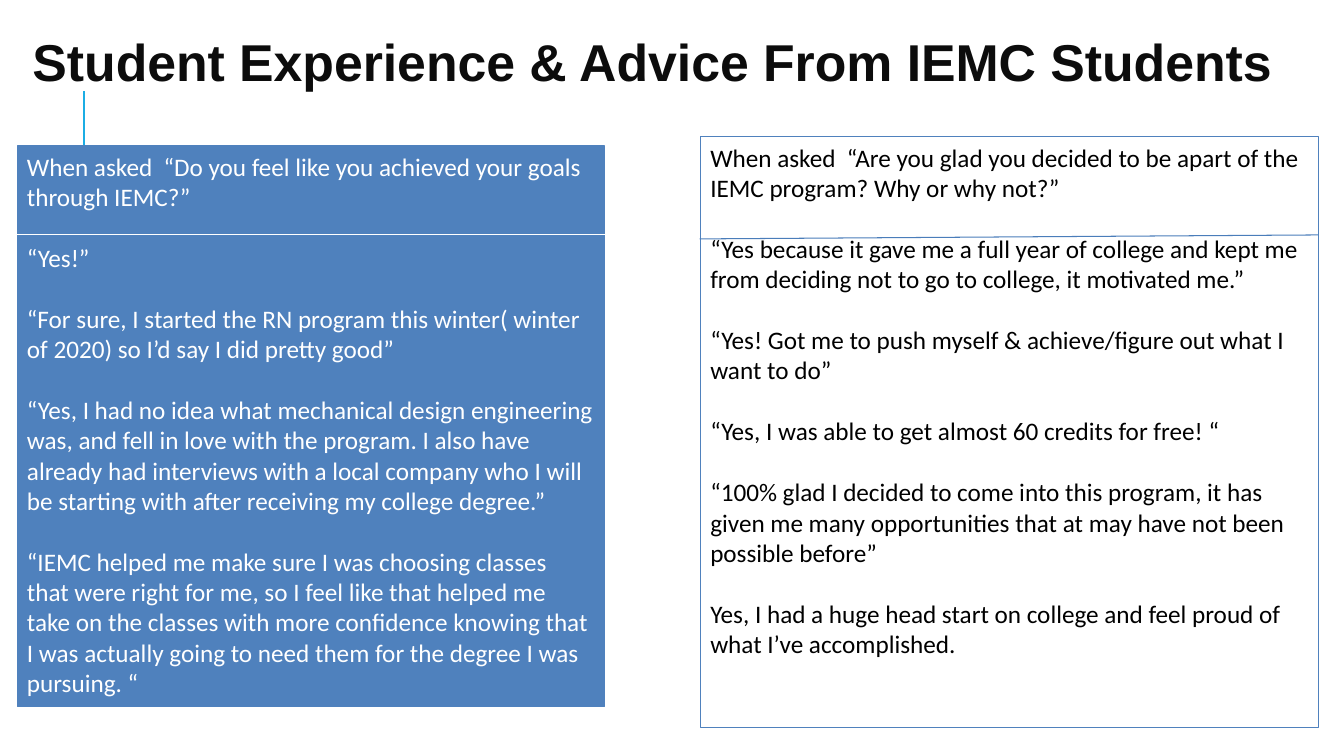
from dataclasses import dataclass

from lxml.etree import SubElement
from pptx import Presentation
from pptx.dml.color import RGBColor as Rgb
from pptx.enum.shapes import MSO_CONNECTOR as Connector, MSO_SHAPE as Preset
from pptx.enum.text import MSO_ANCHOR as Anchor, PP_ALIGN as Align
from pptx.oxml.ns import qn
from pptx.util import Cm, Pt


@dataclass(frozen=True)
class Theme:
    white: Rgb = Rgb(0xFF, 0xFF, 0xFF)
    black: Rgb = Rgb(0, 0, 0)
    title_ink: Rgb = Rgb(0x0C, 0x0C, 0x0C)
    panel_blue: Rgb = Rgb(0x4F, 0x81, 0xBD)
    rule_blue: Rgb = Rgb(0x4A, 0x7D, 0xBA)
    accent: Rgb = Rgb(0x1B, 0xAD, 0xE4)
    title_font: str = "Arial"
    body_font: str = "Calibri"
    title_size: Pt = Pt(37)
    body_size: Pt = Pt(18)
    answer_gap: Pt = Pt(22)
    thin: Pt = Pt(0.75)
    thick: Pt = Pt(1.5)


THEME = Theme()

GOALS = [
    "When asked  “Do you feel like you achieved your goals through IEMC?”",
    "“Yes!”",
    "“For sure, I started the RN program this winter( winter of 2020) so I’d say "
    "I did pretty good”",
    "“Yes, I had no idea what mechanical design engineering was, and fell in love "
    "with the program. I also have already had interviews with a local company who "
    "I will be starting with after receiving my college degree.”",
    "“IEMC helped me make sure I was choosing classes that were right for me, so I "
    "feel like that helped me take on the classes with more confidence knowing that "
    "I was actually going to need them for the degree I was pursuing. “",
]
GLAD = [
    "When asked  “Are you glad you decided to be apart of the IEMC program? "
    "Why or why not?”",
    "“Yes because it gave me a full year of college and kept me from deciding not "
    "to go to college, it motivated me.”",
    "“Yes! Got me to push myself & achieve/figure out what I want to do”",
    "“Yes, I was able to get almost 60 credits for free! “",
    "“100% glad I decided to come into this program, it has given me many "
    "opportunities that at may have not been possible before”",
    "Yes, I had a huge head start on college and feel proud of what I’ve "
    "accomplished.",
]


def apply(target, **values):
    """Set each named format value on the target."""
    for name, value in values.items():
        setattr(target, name, value)


def add_rule(page, start, end, color, width):
    ends = [Cm(value) for value in (*start, *end)]
    rule = page.shapes.add_connector(Connector.STRAIGHT, *ends)
    rule.line.color.rgb = color
    rule.line.width = width
    SubElement(rule._element.spPr, qn("a:effectLst"))


def add_title(page, text):
    box = page.shapes.add_textbox(Cm(0.79), Cm(0.41), Cm(32.26), Cm(1.96))
    frame = box.text_frame
    apply(frame, word_wrap=True, vertical_anchor=Anchor.TOP, margin_left=Cm(0.03),
          margin_top=Cm(0.43), margin_right=0, margin_bottom=0)
    para = frame.paragraphs[0]
    para.line_spacing = 0.96
    span = para.add_run()
    span.text = text
    apply(span.font, name=THEME.title_font, size=THEME.title_size, bold=True)
    span.font.color.rgb = THEME.title_ink


def add_panel(page, place, texts, ink, fill=None):
    """Add a framed question followed by its answers, one paragraph each."""
    panel = page.shapes.add_shape(Preset.RECTANGLE, *map(Cm, place))
    panel.shadow.inherit = False
    if fill is None:
        panel.fill.background()
    else:
        panel.fill.solid()
        panel.fill.fore_color.rgb = fill
    panel.line.color.rgb = THEME.panel_blue
    panel.line.width = THEME.thin
    frame = panel.text_frame
    apply(frame, word_wrap=True, vertical_anchor=Anchor.TOP)
    for index, text in enumerate(texts):
        para = frame.add_paragraph() if index else frame.paragraphs[0]
        para.alignment = Align.LEFT
        if index:
            para.space_before = THEME.answer_gap
        span = para.add_run()
        span.text = text
        apply(span.font, name=THEME.body_font, size=THEME.body_size)
        span.font.color.rgb = ink


def main():
    deck = Presentation()
    apply(deck, slide_width=Cm(33.87), slide_height=Cm(19.05))
    page = deck.slides.add_slide(deck.slide_layouts[6])

    add_rule(page, (2.11, 4.83), (2.11, 2.29), THEME.accent, THEME.thick)
    add_title(page, "Student Experience & Advice From IEMC Students")
    add_panel(page, (0.43, 3.68, 14.81, 14.12), GOALS, THEME.white, THEME.panel_blue)
    add_panel(page, (17.65, 3.45, 15.57, 14.88), GLAD, THEME.black)
    add_rule(page, (17.63, 6.02), (33.22, 5.92), THEME.rule_blue, THEME.thin)
    add_rule(page, (0.43, 5.92), (15.24, 5.92), THEME.white, THEME.thin)

    deck.save("out.pptx")


if __name__ == "__main__":
    main()
